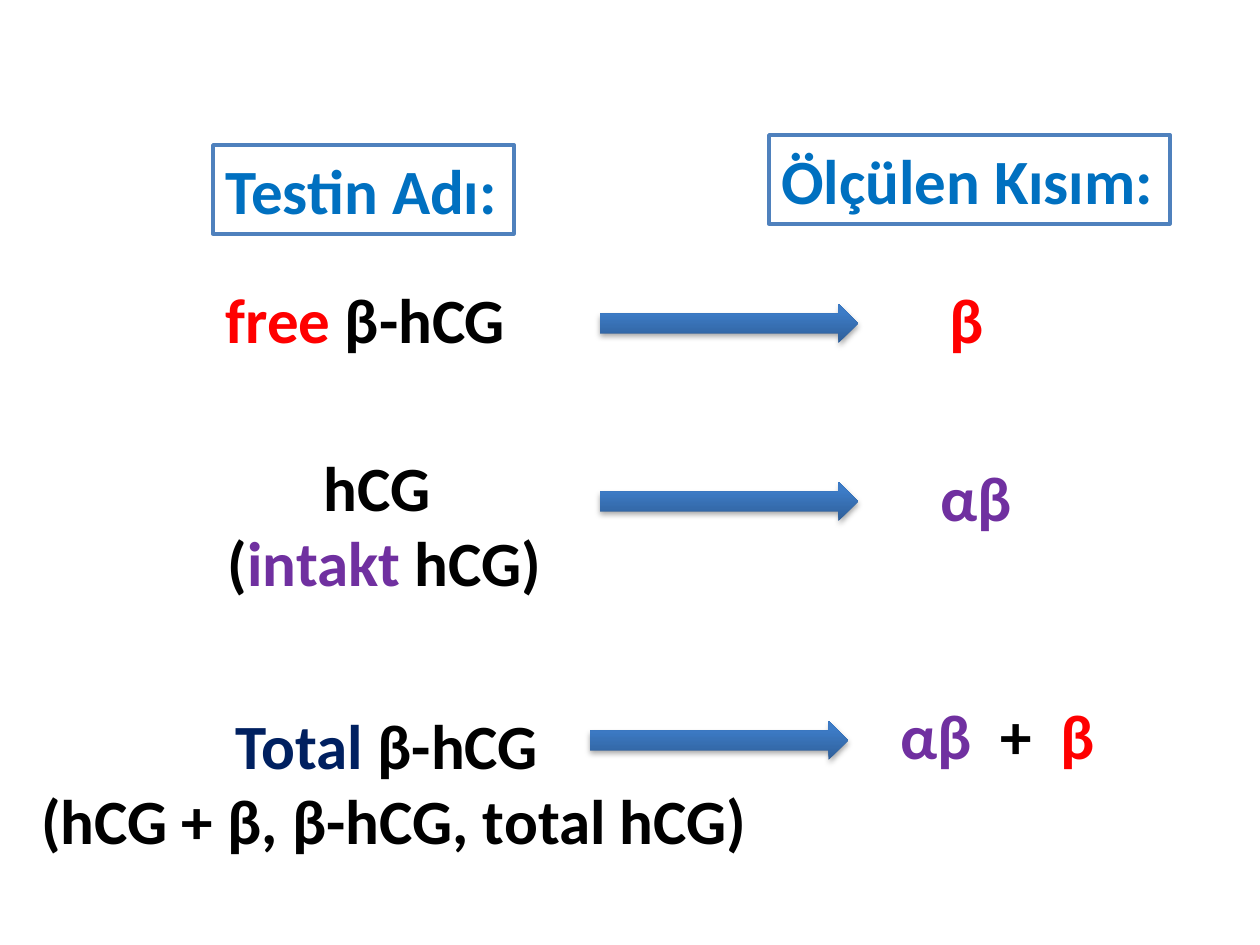
"""Build a slide pairing each hCG test name with the part it measures."""
import pptx
import pptx.dml.color
import pptx.enum.shapes
import pptx.enum.text
import pptx.util

SCALE = 914400 / 126
COLORS = {
    "black": "000000", "red": "FF0000", "purple": "7030A0", "navy": "002060",
    "blue": "0070C0", "border": "4F81BD", "white": "FFFFFF",
    "arrow_bottom": "2F5F99", "arrow_top": "3D7CC7",
}
FONT = {"name": "Calibri", "size": pptx.util.Pt(36), "bold": True}
FRAME = {
    "word_wrap": False,
    "auto_size": pptx.enum.text.MSO_AUTO_SIZE.SHAPE_TO_FIT_TEXT,
    "vertical_anchor": pptx.enum.text.MSO_ANCHOR.TOP,
}
LINE_HEIGHT, PADDING = 76, 13
ARROW_SIZE = (258, 39)
ARROW_STOPS = [(0, "arrow_bottom"), (0.8, "arrow_top")]

HEADINGS = [
    (213, 145, 301, [[("Testin Adı:", "blue")]]),
    (769, 135, 401, [[("Ölçülen Kısım:", "blue")]]),
]
TEST_NAMES = [
    (213, 274, 307, [[("free ", "red"), ("β-hCG", "black")]]),
    (214, 442, 341, [[("hCG ", "black")],
                     [("(", "black"), ("intakt", "purple"), (" hCG)", "black")]]),
    (25, 700, 738, [[("Total ", "navy"), ("β-hCG ", "black")],
                    [("(hCG + β, β-hCG, total hCG)", "black")]]),
]
MEASURED_PARTS = [
    (937, 274, 60, [[("β", "red")]]),
    (928, 452, 98, [[("αβ", "purple")]]),
    (888, 690, 236, [[("αβ", "purple"), ("  +  ", "black"), ("β", "red")]]),
]
ARROWS = [(600, 304), (600, 482), (590, 721)]


def px(*lengths):
    return [pptx.util.Emu(round(length * SCALE)) for length in lengths]


def color(name):
    return pptx.dml.color.RGBColor.from_string(COLORS[name])


def apply(target, values):
    for name, value in values.items():
        setattr(target, name, value)


def write(shape, lines):
    frame = shape.text_frame
    apply(frame, FRAME)
    align = pptx.enum.text.PP_ALIGN
    for index, runs in enumerate(lines):
        paragraph = frame.add_paragraph() if index else frame.paragraphs[0]
        paragraph.alignment = align.CENTER if len(lines) > 1 else align.LEFT
        for text, color_name in runs:
            run = paragraph.add_run()
            run.text = text
            apply(run.font, FONT)
            run.font.color.rgb = color(color_name)


def box(left, top, width, lines):
    return px(left, top, width, LINE_HEIGHT * len(lines) + PADDING)


def main():
    presentation = pptx.Presentation()
    presentation.slide_width, presentation.slide_height = px(1260, 945)
    slide = presentation.slides.add_slide(presentation.slide_layouts[6])
    shape_type = pptx.enum.shapes.MSO_SHAPE

    for left, top, width, lines in TEST_NAMES + MEASURED_PARTS:
        write(slide.shapes.add_textbox(*box(left, top, width, lines)), lines)

    for left, top, width, lines in HEADINGS:
        heading = slide.shapes.add_shape(
            shape_type.RECTANGLE, *box(left, top, width, lines))
        heading.shadow.inherit = False
        heading.fill.solid()
        heading.fill.fore_color.rgb = color("white")
        heading.line.color.rgb = color("border")
        heading.line.width = pptx.util.Pt(2)
        write(heading, lines)

    for position in ARROWS:
        arrow = slide.shapes.add_shape(
            shape_type.RIGHT_ARROW, *px(*position, *ARROW_SIZE))
        arrow.line.fill.background()
        arrow.fill.gradient()
        arrow.fill.gradient_angle = 90
        for stop, (offset, color_name) in zip(arrow.fill.gradient_stops, ARROW_STOPS):
            stop.position = offset
            stop.color.rgb = color(color_name)

    presentation.save("out.pptx")


if __name__ == "__main__":
    main()
